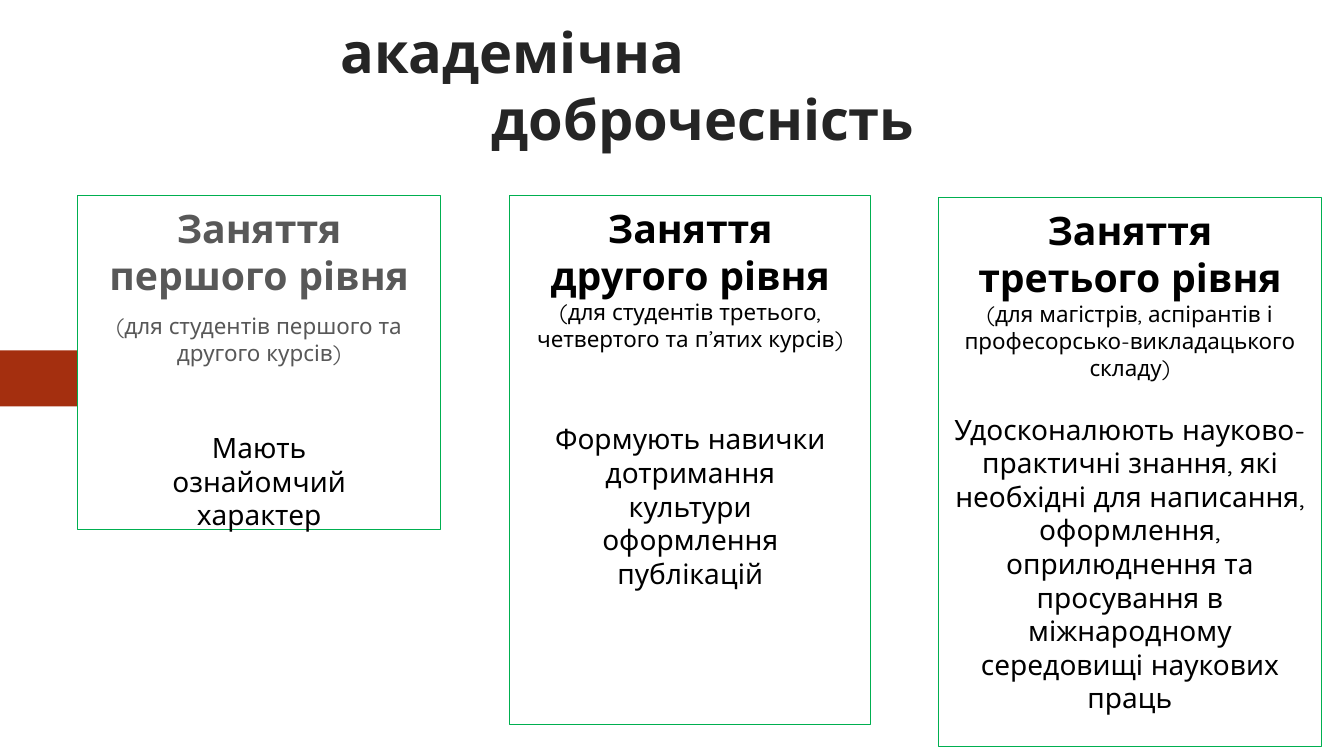
from pptx import Presentation
from pptx import util as u
from pptx.dml.color import RGBColor
from pptx.enum import shapes, text


def colour(value):
    return RGBColor.from_string(value)


def write(paragraph, words, size, hue, bold=False):
    paragraph.text = words
    paragraph.font.name = "Quicksand"
    paragraph.font.size = u.Pt(size)
    paragraph.font.bold = bold
    paragraph.font.color.rgb = colour(hue)


presentation = Presentation()
presentation.slide_width = u.Cm(33.87)
presentation.slide_height = u.Cm(19.05)
slide = presentation.slides.add_slide(presentation.slide_layouts[5])

tab = slide.shapes.add_shape(shapes.MSO_SHAPE.PENTAGON, 0, u.Cm(8.83), u.Cm(4.42), u.Cm(1.41))
tab.shadow.inherit = False
tab.fill.solid()
tab.fill.fore_color.rgb = colour("A42F0F")
tab.line.fill.background()

title = slide.shapes.title
title.left, title.top, title.width, title.height = u.Cm(8.53), u.Cm(0.38), u.Cm(18.42), u.Cm(3.45)
frame = title.text_frame
frame.margin_left = frame.margin_right = frame.margin_bottom = 0
frame.margin_top = u.Cm(0.06)
frame.vertical_anchor = text.MSO_ANCHOR.TOP
frame.word_wrap = True
frame.auto_size = text.MSO_AUTO_SIZE.NONE
heading = frame.paragraphs[0]
write(heading, "академічна\vдоброчесність", 40, "252525", True)
heading.alignment = text.PP_ALIGN.LEFT
properties = heading._p.get_or_add_pPr()
properties.set("marL", str(u.Cm(3.86)))
properties.set("indent", str(u.Cm(-3.81)))

cards = [
    (1.96, 4.93, 9.14, 8.41, "585858", 10.2, 46,
     "Заняття\vпершого рівня",
     "(для студентів першого та\vдругого курсів)",
     "Мають\vознайомчий\vхарактер"),
    (12.85, 4.93, 9.09, 13.34, "000000", 0, 50,
     "Заняття\vдругого рівня",
     "(для студентів третього,\vчетвертого та п’ятих курсів)",
     "Формують навички\vдотримання\vкультури\vоформлення\vпублікацій"),
    (23.65, 4.98, 9.65, 13.84, "000000", 0, 22.4,
     "Заняття\vтретього рівня",
     "(для магістрів, аспірантів і\vпрофесорсько-викладацького\vскладу)",
     "Удосконалюють науково-\vпрактичні знання, які\vнеобхідні для написання,\vоформлення,\v"
     "оприлюднення та\vпросування в\vміжнародному\vсередовищі наукових\vпраць"),
]

for left, top, width, height, hue, audience_gap, purpose_gap, level, audience, purpose in cards:
    card = slide.shapes.add_shape(
        shapes.MSO_SHAPE.RECTANGLE, u.Cm(left), u.Cm(top), u.Cm(width), u.Cm(height))
    card.shadow.inherit = False
    card.fill.solid()
    card.fill.fore_color.rgb = colour("FFFFFF")
    card.line.color.rgb = colour("00AF50")
    card.line.width = u.Pt(0.72)
    frame = card.text_frame
    frame.word_wrap = True
    frame.vertical_anchor = text.MSO_ANCHOR.TOP
    frame.margin_left = frame.margin_right = frame.margin_bottom = 0
    frame.margin_top = u.Cm(0.21)
    write(frame.paragraphs[0], level, 28, hue, True)
    for words, size, ink, gap in (
            (audience, 16, hue, audience_gap), (purpose, 20, "000000", purpose_gap)):
        paragraph = frame.add_paragraph()
        write(paragraph, words, size, ink)
        paragraph.space_before = u.Pt(gap)
    for paragraph in frame.paragraphs:
        paragraph.alignment = text.PP_ALIGN.CENTER

presentation.save("out.pptx")
